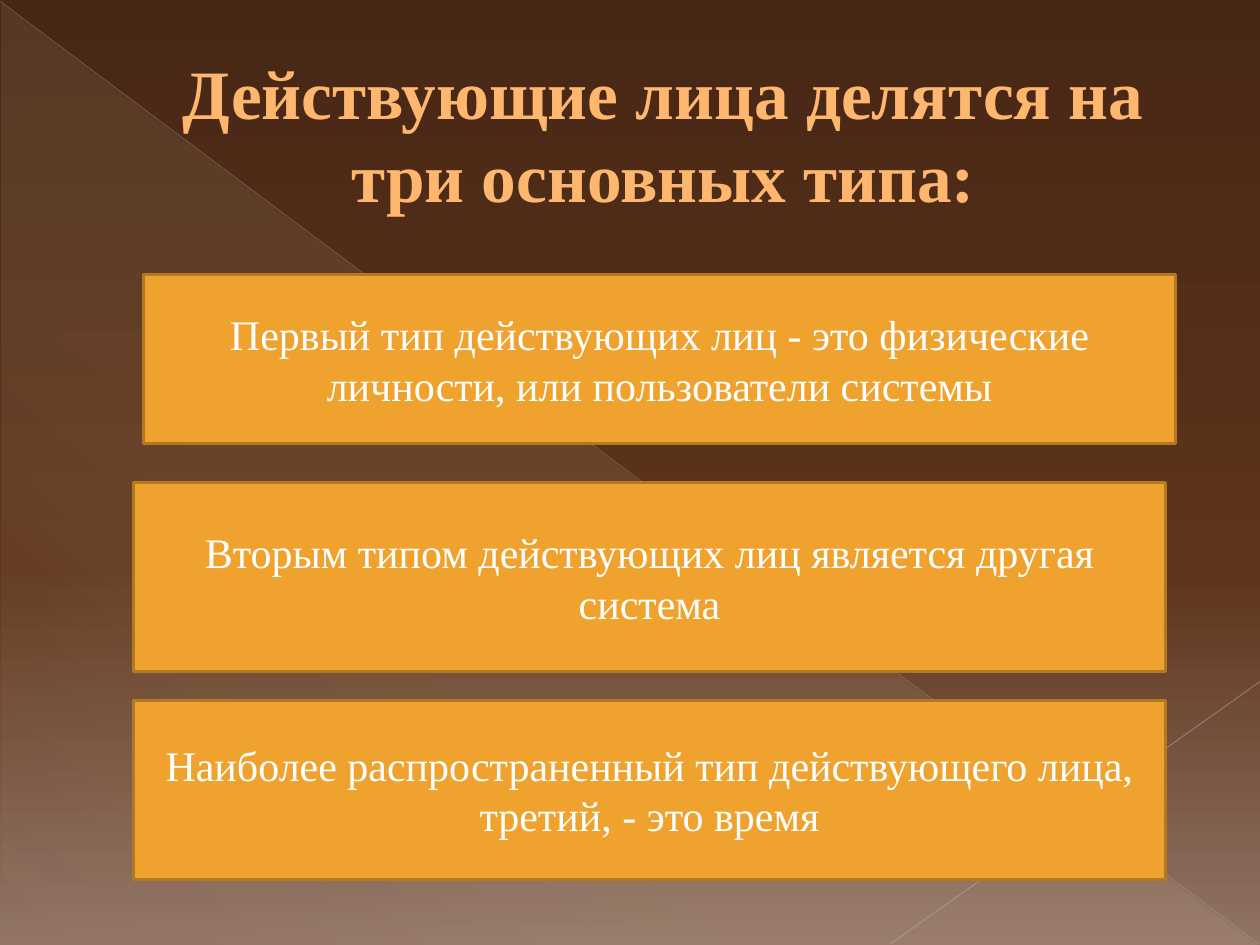
from dataclasses import dataclass

from lxml.etree import SubElement
from pptx import Presentation
from pptx.dml.color import RGBColor
from pptx.enum.shapes import MSO_CONNECTOR, MSO_SHAPE
from pptx.enum.text import MSO_ANCHOR, PP_ALIGN
from pptx.oxml.ns import qn
from pptx.util import Pt

FONT = "Times New Roman"
BOX_LEFT, BOX_WIDTH = 76.3, 589.7


@dataclass
class Stop:
    pos: int
    color: str
    alpha: int = 100


@dataclass
class Ray:
    start: tuple[float, float]
    end: tuple[float, float]
    color: str
    width: float
    alpha: int


@dataclass
class ActorBox:
    text: str
    top: float
    height: float
    left: float = BOX_LEFT


BACKGROUND = [Stop(0, "472715"), Stop(60, "5E341B"), Stop(100, "907365")]
GLOW = [Stop(0, "FBEEC9", 10), Stop(70, "FBEEC9", 8), Stop(100, "FBEEC9", 1)]
RAYS = [
    Ray((0, 0.7), (719.3, 539.3), "BCB7B4", 0.39, 35),
    Ray((720, 389.5), (509, 539.3), "C4BFBD", 0.47, 45),
]
BOXES = [
    ActorBox("Первый тип действующих лиц - это физические личности, "
             "или пользователи системы", 157, 96.5, left=82.1),
    ActorBox("Вторым типом действующих лиц является другая система", 275.8, 108),
    ActorBox("Наиболее распространенный тип действующего лица, третий, - это время",
             400.3, 102.2),
]


def rgb(value: str) -> RGBColor:
    """Turn a hex string into a colour."""
    return RGBColor.from_string(value)


def add_color(parent, color: str, alpha: int = 100) -> None:
    """Append an sRGB colour with its opacity in percent."""
    clr = SubElement(parent, qn("a:srgbClr"), val=color)
    if alpha < 100:
        SubElement(clr, qn("a:alpha"), val=str(alpha * 1000))


def set_gradient(fill, props, stops: list[Stop], angle: int) -> None:
    """Fill an object with a linear gradient turned clockwise."""
    fill.solid()
    solid = props.find(qn("a:solidFill"))
    grad = solid.makeelement(qn("a:gradFill"), {"rotWithShape": "1"})
    props.replace(solid, grad)
    stop_list = SubElement(grad, qn("a:gsLst"))
    for stop in stops:
        gs = SubElement(stop_list, qn("a:gs"), pos=str(stop.pos * 1000))
        add_color(gs, stop.color, stop.alpha)
    SubElement(grad, qn("a:lin"), ang=str(angle * 60000), scaled="0")


def set_text(sp, text: str, *, size: float, color: str, bold: bool = False):
    """Write centred text into a shape and return its run."""
    tf = sp.text_frame
    tf.word_wrap = True
    tf.vertical_anchor = MSO_ANCHOR.MIDDLE
    p = tf.paragraphs[0]
    p.alignment = PP_ALIGN.CENTER
    r = p.add_run()
    r.text = text
    r.font.name, r.font.size, r.font.bold = FONT, Pt(size), bold
    r.font.color.rgb = rgb(color)
    return r


def add_glow(s) -> None:
    """Draw the pale triangle over the lower left half."""
    sp = s.shapes.add_shape(MSO_SHAPE.RIGHT_TRIANGLE, Pt(0.7), Pt(1.4), Pt(718.6), Pt(538.6))
    sp.shadow.inherit = False
    sp.line.fill.background()
    set_gradient(sp.fill, sp.element.spPr, GLOW, 133)


def add_ray(s, ray: Ray) -> None:
    """Draw one thin translucent line."""
    line = s.shapes.add_connector(
        MSO_CONNECTOR.STRAIGHT, *(Pt(v) for v in ray.start + ray.end))
    line.line.width = Pt(ray.width)
    line.line.color.rgb = rgb(ray.color)
    clr = line.element.spPr.find(".//" + qn("a:srgbClr"))
    SubElement(clr, qn("a:alpha"), val=str(ray.alpha * 1000))
    SubElement(line.element.spPr, qn("a:effectLst"))


def add_title(s, text: str) -> None:
    """Place the outlined title above the decoration."""
    title = s.shapes.title
    title.left, title.top, title.width, title.height = Pt(36), Pt(21), Pt(648), Pt(110)
    r = set_text(title, text, size=39.6, color="FFB66E", bold=True)
    p_pr = title.text_frame.paragraphs[0]._p.get_or_add_pPr()
    p_pr.set("marL", str(Pt(38)))
    p_pr.set("indent", "0")
    r_pr = r.font._element if hasattr(r.font, "_element") else r._r.get_or_add_rPr()
    ln = SubElement(r_pr, qn("a:ln"), w=str(Pt(0.5)))
    add_color(SubElement(ln, qn("a:solidFill")), "A67020")
    r_pr.insert(0, ln)
    s.shapes.element.append(title.element) if hasattr(s.shapes, "element") else \
        title.element.getparent().append(title.element)


def add_box(s, box: ActorBox) -> None:
    """Draw one framed box describing an actor type."""
    sp = s.shapes.add_shape(
        MSO_SHAPE.RECTANGLE, Pt(box.left), Pt(box.top), Pt(BOX_WIDTH), Pt(box.height))
    sp.shadow.inherit = False
    sp.fill.solid()
    sp.fill.fore_color.rgb = rgb("F0A22E")
    sp.line.color.rgb = rgb("B27822")
    sp.line.width = Pt(2)
    set_text(sp, box.text, size=24, color="FFFFFF")


def main() -> None:
    """Build and save the slide."""
    prs = Presentation()
    prs.slide_width, prs.slide_height = Pt(720), Pt(540)
    s = prs.slides.add_slide(prs.slide_layouts[5])
    fill = s.background.fill
    fill.solid()
    set_gradient(fill, s.element.find(".//" + qn("p:bgPr")), BACKGROUND, 90)
    add_glow(s)
    for ray in RAYS:
        add_ray(s, ray)
    add_title(s, "Действующие лица делятся на три основных типа:")
    for box in BOXES:
        add_box(s, box)
    prs.save("out.pptx")


if __name__ == "__main__":
    main()
